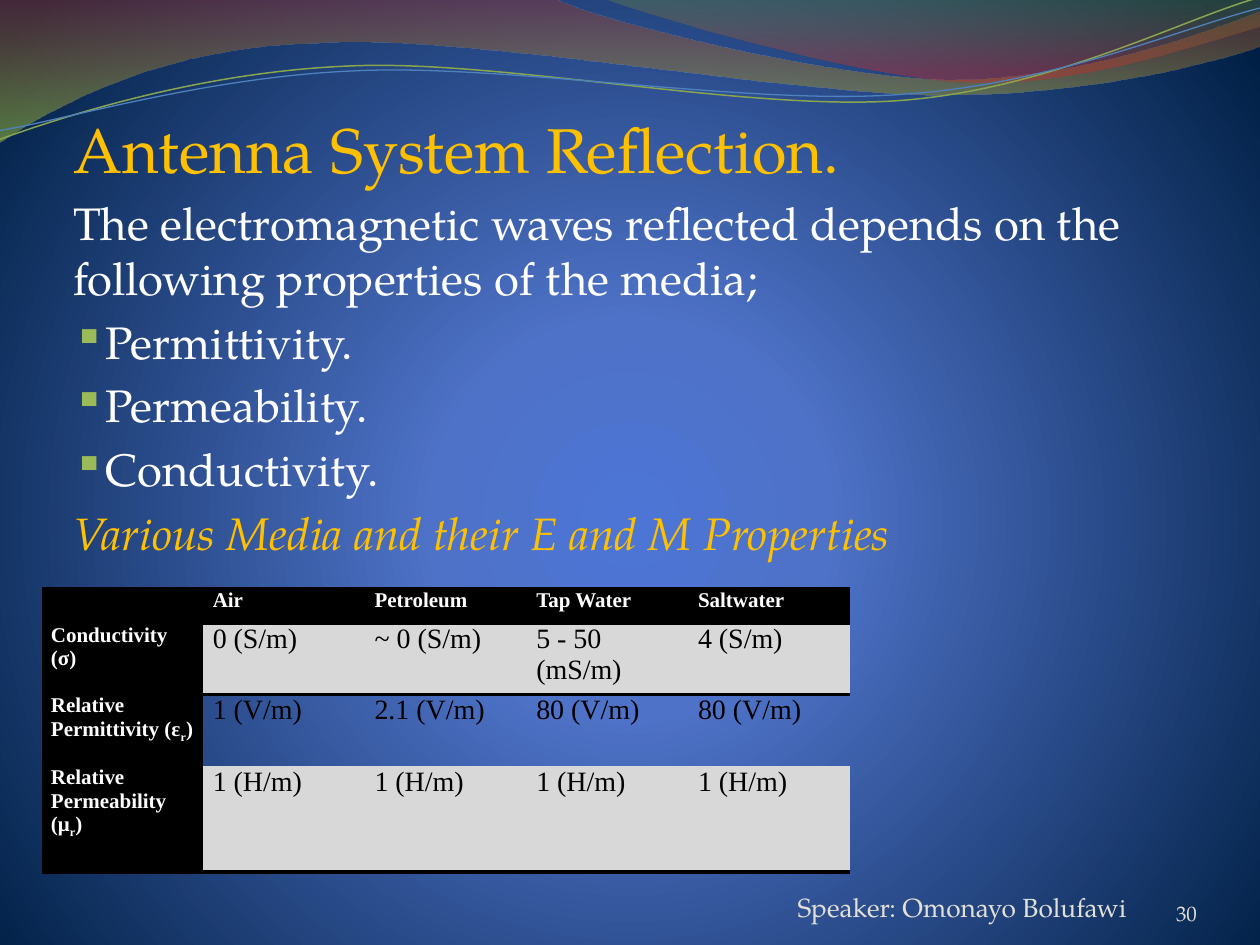
from pptx import Presentation
from pptx.dml.color import RGBColor
from pptx.enum.text import MSO_ANCHOR, PP_ALIGN
from pptx.oxml import parse_xml
from pptx.oxml.ns import nsdecls, qn
from pptx.util import Inches, Pt

BOTTOM, TOP = MSO_ANCHOR.BOTTOM, MSO_ANCHOR.TOP
LEFT, RIGHT = PP_ALIGN.LEFT, PP_ALIGN.RIGHT

GOLD = RGBColor(0xFF, 0xC0, 0x00)
WHITE = RGBColor(0xFF, 0xFF, 0xFF)
BLACK = RGBColor(0x00, 0x00, 0x00)
GREY = RGBColor(0xD8, 0xD8, 0xD8)
CREAM = RGBColor(0xE3, 0xE1, 0xD7)
GREEN = RGBColor(0x9B, 0xBB, 0x59)
OLIVE = RGBColor(0x89, 0xA5, 0x4F)
BLUE = RGBColor(0x4F, 0x81, 0xBD)
SKY = RGBColor(0x4D, 0x75, 0xD6)
ROYAL = RGBColor(0x4E, 0x72, 0xC7)
NAVY = RGBColor(0x00, 0x1F, 0x44)
BRICK = RGBColor(0x97, 0x33, 0x30)
LIME = RGBColor(0x95, 0xC2, 0x38)
MOSS = RGBColor(0x76, 0x95, 0x37)
RED = RGBColor(0xBE, 0x33, 0x30)

SERIF = "TeX Gyre Pagella"
TABLE_FONT = "Times New Roman"
BULLET_FONT = "OpenSymbol"
NO_STYLE = "{2D5ABB26-0587-4C30-8999-92F81FD0307C}"
RADIAL = ('<a:path path="circle"><a:fillToRect l="10000" t="110000" '
          'r="10000" b="100000"/></a:path>')
DOWNWARD = '<a:lin ang="5400000" scaled="0"/>'
CURVE_TILT = 357.3

LEFT_WAVE = [
    (0, 0), (4.4, -0.01),
    (4.76, 0.17, 6.64, 0.63, 7.58, 0.63), (8.53, 0.63, 9.58, 0.26, 10, 0.09),
    (10.01, 0.36),
    (9.83, 0.44, 8.7, 0.76, 7.46, 0.75), (6.22, 0.75, 3.82, 0.28, 2.57, 0.34),
    (1.29, 0.36, 0.46, 0.83, -0.01, 1.13), (0, 0)]
RIGHT_WAVE = [
    (4.79, -0.01), (5.09, 0.11, 6.82, 0.62, 7.69, 0.65),
    (8.56, 0.69, 9.61, 0.32, 10, 0.21), (10, 0), (4.79, -0.01)]
OLIVE_CURVE = [
    (-0.02, 0.87), (0.47, 0.72, 1.58, 0.41, 2.78, 0.42),
    (3.96, 0.42, 5.91, 0.93, 7.12, 0.9), (8.32, 0.87, 9.4, 0.36, 10, 0.22)]
BLUE_CURVE = [
    (-0.02, 0.8), (0.46, 0.75, 1.64, 0.45, 2.83, 0.46),
    (4.03, 0.46, 5.96, 0.89, 7.16, 0.85), (8.35, 0.83, 9.42, 0.42, 10.02, 0.3)]

BODY = [
    ("Antenna System Reflection.", 36, GOLD, False),
    ("The electromagnetic waves reflected depends on the following "
     "properties of the media;", 26, WHITE, False),
    ("Permittivity.", 26, WHITE, True),
    ("Permeability.", 26, WHITE, True),
    ("Conductivity.", 26, WHITE, True),
    ("Various Media and their E and M Properties", 26, GOLD, False)]

MEDIA = [
    [[], ["Air"], ["Petroleum"], ["Tap Water"], ["Saltwater"]],
    [["Conductivity (σ)"], ["0 (S/m)"], ["~ 0 (S/m)"], ["5 - 50 (mS/m)"],
     ["4 (S/m)"]],
    [["Relative Permittivity (ε", "r", ")"], ["1 (V/m)"], ["2.1 (V/m)"],
     ["80 (V/m)"], ["80 (V/m)"]],
    [["Relative Permeability (μ", "r", ")"]] + [["1 (H/m)"]] * 4]
ROW_HEIGHTS = [0.28, 0.56, 0.57, 0.84]
RULES = [(0, "lnT"), (1, "lnT"), (3, "lnB")]


def set_gradient(fill, owner, stops, direction):
    """Give a fill gradient stops of (position, colour, opacity)."""
    fill.gradient()
    marks = "".join(
        f'<a:gs pos="{place * 1000}"><a:srgbClr val="{color}">'
        f'<a:alpha val="{opacity * 1000}"/></a:srgbClr></a:gs>'
        for place, color, opacity in stops)
    old = owner.xpath(".//a:gradFill")[0]
    new = parse_xml(f'<a:gradFill {nsdecls("a")} rotWithShape="1">'
                    f'<a:gsLst>{marks}</a:gsLst>{direction}</a:gradFill>')
    old.getparent().replace(old, new)


def add_outline(page, segments, close):
    """Draw line ends and Bezier segments as one outline without shadow."""
    points = [(Inches(x), Inches(y)) for segment in segments
              for x, y in zip(segment[::2], segment[1::2])]
    builder = page.shapes.build_freeform(*points[0], scale=1.0)
    builder.add_line_segments(points[1:], close=close)
    shape = builder.convert_to_shape()
    shape.shadow.inherit = False
    lines = iter(shape.element.xpath(".//a:lnTo"))
    for segment in segments[1:]:
        line = next(lines)
        if len(segment) == 6:
            bend = parse_xml(f'<a:cubicBezTo {nsdecls("a")}/>')
            line.addprevious(bend)
            for part in (line, next(lines), next(lines)):
                bend.append(part[0])
                part.getparent().remove(part)
    return shape


def add_wave(page, segments, stops):
    """Add a translucent filled wave."""
    wave = add_outline(page, segments, True)
    wave.line.fill.background()
    set_gradient(wave.fill, wave.element, stops, DOWNWARD)


def add_curve(page, segments, color, width):
    """Add a thin, slightly tilted open curve."""
    curve = add_outline(page, segments, False)
    curve.rotation = CURVE_TILT
    curve.fill.background()
    curve.line.color.rgb = color
    curve.line.width = Pt(width)


def style_span(span, font, size, color):
    """Set the font, size and colour of a run."""
    span.font.name = font
    span.font.size = Pt(size)
    span.font.color.rgb = color


def add_box(page, left, top, width, height, anchor):
    """Add a wrapping text box without insets and return its frame."""
    box = page.shapes.add_textbox(
        Inches(left), Inches(top), Inches(width), Inches(height))
    frame = box.text_frame
    frame.word_wrap = True
    frame.vertical_anchor = anchor
    frame.margin_left = frame.margin_right = 0
    frame.margin_top = frame.margin_bottom = 0
    return frame


def format_para(para, bulleted):
    """Set relative spacing and, if asked, a green square bullet."""
    tags = ['<a:spcBef {}><a:spcPct val="20000"/></a:spcBef>']
    if bulleted:
        tags += [f'<a:buClr {{}}><a:srgbClr val="{GREEN}"/></a:buClr>',
                 '<a:buSzPct {} val="95000"/>',
                 f'<a:buFont {{}} typeface="{BULLET_FONT}"/>',
                 '<a:buChar {} char="▪"/>']
    for tag in tags:
        para._p.get_or_add_pPr().append(parse_xml(tag.format(nsdecls("a"))))


def add_body(page):
    """Add the heading, the list and the table caption."""
    frame = add_box(page, 0.58, 0.83, 8.59, 6.42, TOP)
    frame.margin_top = frame.margin_bottom = Inches(0.05)
    frame.margin_right = Inches(0.02)
    frame.text = "\n".join(row[0] for row in BODY)
    for para, (_, size, color, bulleted) in zip(frame.paragraphs, BODY):
        format_para(para, bulleted)
        style_span(para.runs[0], SERIF, size, color)
    frame.paragraphs[-1].runs[0].font.italic = True


def add_footer(page, text, left, top, width, size, align):
    """Add a line of footer text."""
    frame = add_box(page, left, top, width, 0.4, BOTTOM)
    frame.text = text
    frame.paragraphs[0].alignment = align
    style_span(frame.paragraphs[0].runs[0], SERIF, size, CREAM)


def add_border(cell, side):
    """Put a black rule on the lnT or lnB side of a cell."""
    rule = parse_xml(f'<a:{side} {nsdecls("a")} w="28575"><a:solidFill>'
                     f'<a:srgbClr val="{BLACK}"/></a:solidFill></a:{side}>')
    cell._tc.get_or_add_tcPr().insert(0, rule)


def fill_cell(cell, parts, row, column):
    """Write a cell, the second part as a subscript, and colour it."""
    heading = row == 0 or column == 0
    cell.margin_left = cell.margin_right = Pt(5.4)
    cell.margin_top = cell.margin_bottom = 0
    para = cell.text_frame.paragraphs[0]
    for index, part in enumerate(parts):
        span = para.add_run()
        span.text = part
        style_span(span, TABLE_FONT, 12 if heading else 16,
                   WHITE if heading else BLACK)
        span.font.bold = heading
        if index == 1:
            span.font._element.set("baseline", "-25000")
    if not parts:
        para._p.append(parse_xml(f'<a:endParaRPr {nsdecls("a")} sz="1200"/>'))
    if heading or row % 2:
        cell.fill.solid()
        cell.fill.fore_color.rgb = BLACK if heading else GREY
    else:
        cell.fill.background()


def add_media_table(page):
    """Add the table of media and their properties."""
    table = page.shapes.add_table(
        len(MEDIA), len(MEDIA[0]), Inches(0.33), Inches(4.67),
        Inches(6.42), Inches(sum(ROW_HEIGHTS))).table
    table._tbl.tblPr.find(qn("a:tableStyleId")).text = NO_STYLE
    for row, (height, cells) in enumerate(zip(ROW_HEIGHTS, MEDIA)):
        table.rows[row].height = Inches(height)
        for column, parts in enumerate(cells):
            fill_cell(table.cell(row, column), parts, row, column)
    for row, side in RULES:
        for column in range(len(MEDIA[0])):
            add_border(table.cell(row, column), side)


def main():
    """Build and save the slide."""
    deck = Presentation()
    deck.slide_width, deck.slide_height = Inches(10), Inches(7.5)
    page = deck.slides.add_slide(deck.slide_layouts[6])
    set_gradient(page.background.fill, page.element,
                 [(0, SKY, 100), (25, ROYAL, 100), (100, NAVY, 100)], RADIAL)
    add_wave(page, LEFT_WAVE, [(0, BRICK, 45), (100, LIME, 55)])
    add_wave(page, RIGHT_WAVE, [(0, MOSS, 30), (80, RED, 45)])
    add_curve(page, OLIVE_CURVE, OLIVE, 0.85)
    add_curve(page, BLUE_CURVE, BLUE, 0.75)
    add_body(page)
    add_footer(page, "Speaker: Omonayo Bolufawi", 6.33, 6.92, 3.67, 15, LEFT)
    add_footer(page, "30", 8.67, 6.95, 0.83, 12, RIGHT)
    add_media_table(page)
    deck.save("out.pptx")


if __name__ == "__main__":
    main()
